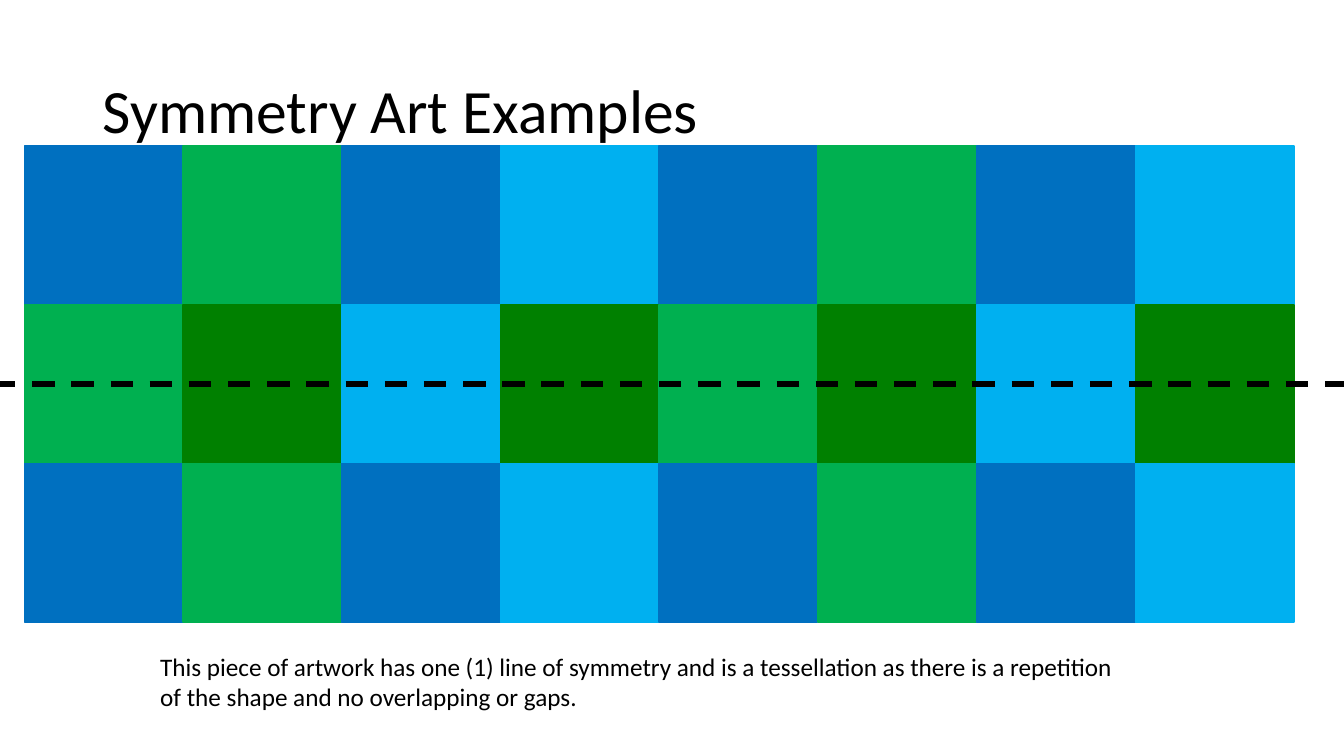
import pptx
import pptx.dml.color
import pptx.enum.dml
import pptx.enum.shapes
import pptx.enum.text
import pptx.oxml.ns
import pptx.util
from lxml import etree

Inches = pptx.util.Inches
ANCHOR = pptx.enum.text.MSO_ANCHOR

BLUE, SKY, GREEN, DARK_GREEN, BLACK = "0070C0", "00B0F0", "00B050", "008000", "000000"
OUTER_ROW = [BLUE, GREEN, BLUE, SKY] * 2
MIDDLE_ROW = [GREEN, DARK_GREEN, SKY, DARK_GREEN] * 2
TILE_ROWS = [OUTER_ROW, MIDDLE_ROW, OUTER_ROW]


def color(hex_string):
    return pptx.dml.color.RGBColor.from_string(hex_string)


def set_attributes(target, values):
    for name, value in values.items():
        setattr(target, name, value)


def add_text(slide, box, text, size, frame_format, line_spacing=1.0):
    text_box = slide.shapes.add_textbox(*map(Inches, box))
    frame = text_box.text_frame
    set_attributes(frame, {"word_wrap": True, **frame_format})
    paragraph = frame.paragraphs[0]
    paragraph.line_spacing = line_spacing
    run = paragraph.add_run()
    run.text = text
    set_attributes(run.font, {"name": "Calibri", "size": pptx.util.Pt(size)})
    run.font.color.rgb = color(BLACK)


def add_tessellation(slide, left, top, pitch, tile_rows):
    """Lay square tiles edge to edge, one for each colour in the rows."""
    for row, tile_colors in enumerate(tile_rows):
        for column, tile_color in enumerate(tile_colors):
            tile = slide.shapes.add_shape(
                pptx.enum.shapes.MSO_SHAPE.RECTANGLE,
                Inches(left + column * pitch), Inches(top + row * pitch),
                Inches(pitch), Inches(pitch))
            tile.shadow.inherit = False
            tile.fill.solid()
            tile.fill.fore_color.rgb = color(tile_color)
            tile.line.color.rgb = color(tile_color)
            tile.line.width = pptx.util.Pt(1)


def add_symmetry_line(slide, left, right, middle):
    connector = slide.shapes.add_connector(
        pptx.enum.shapes.MSO_CONNECTOR.STRAIGHT,
        Inches(left), Inches(middle), Inches(right), Inches(middle))
    set_attributes(connector.line, {
        "width": pptx.util.Pt(4),
        "dash_style": pptx.enum.dml.MSO_LINE.DASH,
    })
    connector.line.color.rgb = color(BLACK)
    etree.SubElement(connector.element.spPr, pptx.oxml.ns.qn("a:effectLst"))


def main():
    presentation = pptx.Presentation()
    set_attributes(presentation, {"slide_width": Inches(13.33), "slide_height": Inches(7.5)})
    slide = presentation.slides.add_slide(presentation.slide_layouts[6])
    add_text(slide, (0.92, 0.4, 11.5, 1.45), "Symmetry Art Examples", 44,
             {"vertical_anchor": ANCHOR.MIDDLE}, line_spacing=0.9)
    add_tessellation(slide, 0.24, 1.45, 11.02 / 7, TILE_ROWS)
    add_text(slide, (1.49, 6.41, 9.76, 0.71),
             "This piece of artwork has one (1) line of symmetry and is a tessellation "
             "as there is a repetition of the shape and no overlapping or gaps.", 18,
             {"auto_size": pptx.enum.text.MSO_AUTO_SIZE.SHAPE_TO_FIT_TEXT})
    add_symmetry_line(slide, -0.07, 13.38, 3.81)
    presentation.save("out.pptx")


if __name__ == "__main__":
    main()
